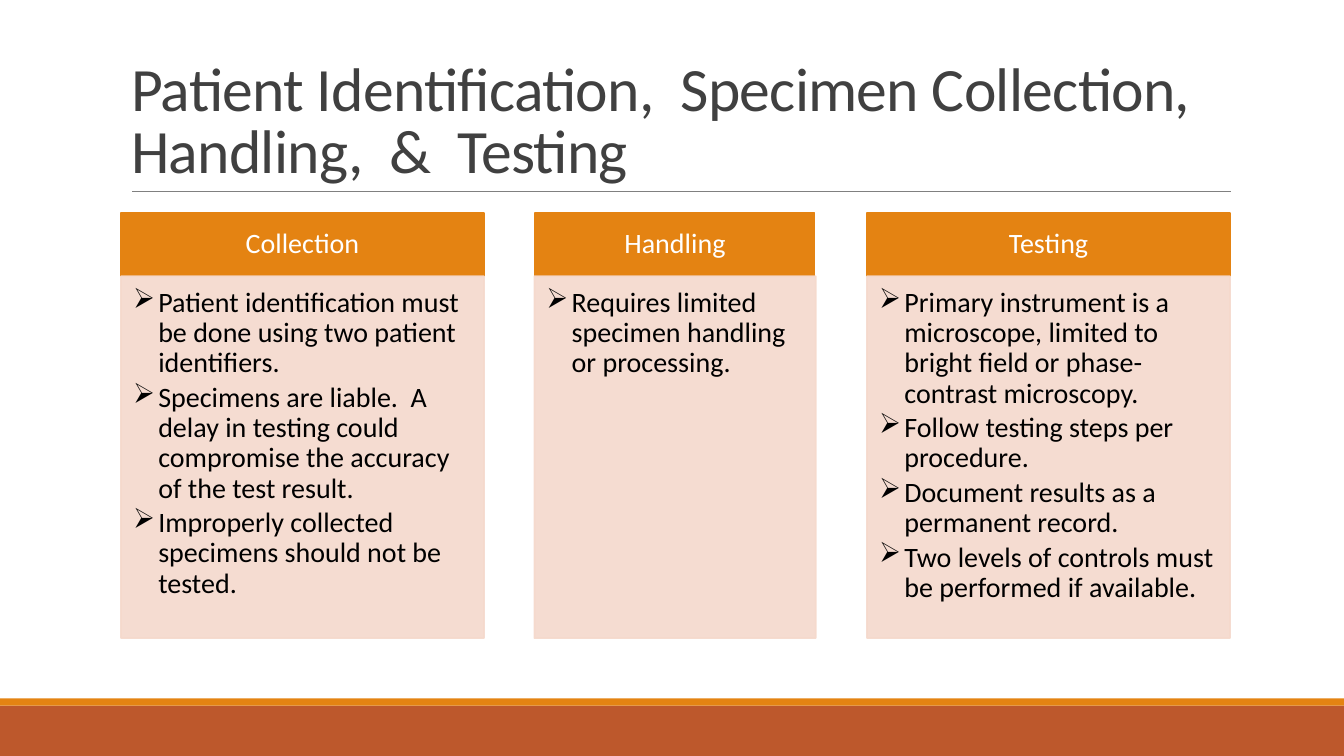
from dataclasses import dataclass

from lxml import etree
from pptx import Presentation
from pptx.dml.color import RGBColor
from pptx.enum.shapes import MSO_CONNECTOR, MSO_SHAPE
from pptx.enum.text import MSO_ANCHOR as Anchor, MSO_AUTO_SIZE as AutoSize, PP_ALIGN as Align
from pptx.oxml.ns import qn
from pptx.util import Emu, Pt

PX = 9144  # EMU per px, 100 px to the inch


@dataclass(frozen=True)
class Theme:
    font: str = "Calibri"
    title_size: int = 44
    text_size: int = 20
    orange: str = "E48312"
    rust: str = "BD582C"
    blush: str = "F5D9CC"
    rule: str = "808080"
    title: str = "404040"
    white: str = "FFFFFF"
    black: str = "000000"


THEME = Theme()
TITLE = "Patient Identification,  Specimen Collection, Handling,  &  Testing"

# Panel geometry
HEADER_TOP, HEADER_HEIGHT = 211, 63
BODY_TOP, BODY_HEIGHT = 274, 359

# Heading, header (left, width), body (left, width), bullet points
COLUMNS = [
    ("Collection", (120, 360), (120, 360), [
        "Patient identification must be done using two patient identifiers.",
        "Specimens are liable.  A delay in testing could compromise the accuracy of the test result.",
        "Improperly collected specimens should not be tested.",
    ]),
    ("Handling", (531, 277), (530, 279), [
        "Requires limited specimen handling or processing.",
    ]),
    ("Testing", (860, 360), (860, 360), [
        "Primary instrument is a microscope, limited to bright field or phase-contrast microscopy.",
        "Follow testing steps per procedure.",
        "Document results as a permanent record.",
        "Two levels of controls must be performed if available.",
    ]),
]


def px(value):
    return Emu(value * PX)


def set_all(target, values):
    for name, value in values.items():
        setattr(target, name, value)


def format_frame(frame, anchor, margins):
    names = ("margin_left", "margin_top", "margin_right", "margin_bottom")
    set_all(frame, {
        "word_wrap": True,
        "auto_size": AutoSize.NONE,
        "vertical_anchor": anchor,
        **{name: px(margin) for name, margin in zip(names, margins)},
    })


def add_run(paragraph, text, size, color):
    run = paragraph.add_run()
    run.text = text
    set_all(run.font, {"name": THEME.font, "size": Pt(size)})
    run.font.color.rgb = RGBColor.from_string(color)
    return run


def add_rectangle(slide, left, top, width, height, color, outlined=False):
    shape = slide.shapes.add_shape(
        MSO_SHAPE.RECTANGLE, px(left), px(top), px(width), px(height))
    shape.shadow.inherit = False
    shape.fill.solid()
    shape.fill.fore_color.rgb = RGBColor.from_string(color)
    if outlined:
        shape.line.color.rgb = RGBColor.from_string(color)
        shape.line.width = Pt(1.25)
    else:
        shape.line.fill.background()
    return shape


def set_opacity(shape, percent):
    for color in shape.element.spPr.iter(qn("a:srgbClr")):
        etree.SubElement(color, qn("a:alpha"), val=str(percent * 1000))


def add_rule(slide, left, top, right):
    line = slide.shapes.add_connector(
        MSO_CONNECTOR.STRAIGHT, px(left), px(top), px(right), px(top))
    line.line.color.rgb = RGBColor.from_string(THEME.rule)
    line.line.width = Pt(0.5)
    etree.SubElement(line.element.spPr, qn("a:effectLst"))


def write_title(slide):
    title = slide.shapes.title
    set_all(title, {"left": px(120), "top": px(31), "width": px(1100), "height": px(159)})
    format_frame(title.text_frame, Anchor.BOTTOM, (10, 5, 10, 5))
    paragraph = title.text_frame.paragraphs[0]
    set_all(paragraph, {"alignment": Align.LEFT, "line_spacing": 0.85})
    run = add_run(paragraph, TITLE, THEME.title_size, THEME.title)
    run.font._element.set("spc", "-50")


def add_header(slide, left, width, heading):
    header = add_rectangle(
        slide, left, HEADER_TOP, width, HEADER_HEIGHT, THEME.orange, outlined=True)
    format_frame(header.text_frame, Anchor.MIDDLE, (16, 9, 16, 9))
    paragraph = header.text_frame.paragraphs[0]
    set_all(paragraph, {"alignment": Align.CENTER, "line_spacing": 0.9})
    add_run(paragraph, heading, THEME.text_size, THEME.white)


def add_bullet(paragraph):
    properties = paragraph._p.get_or_add_pPr()
    properties.set("marL", str(px(25)))
    properties.set("indent", str(px(-25)))
    etree.SubElement(properties, qn("a:buChar"), char="➢")


def add_bullet_panel(slide, left, width, points):
    panel = add_rectangle(
        slide, left, BODY_TOP, width, BODY_HEIGHT, THEME.blush, outlined=True)
    set_opacity(panel, 90)
    frame = panel.text_frame
    format_frame(frame, Anchor.TOP, (12, 12, 16, 17))
    for index, point in enumerate(points):
        paragraph = frame.add_paragraph() if index else frame.paragraphs[0]
        add_bullet(paragraph)
        set_all(paragraph, {
            "alignment": Align.LEFT, "line_spacing": 0.9, "space_after": Pt(3)})
        add_run(paragraph, point, THEME.text_size, THEME.black)


def main():
    presentation = Presentation()
    set_all(presentation, {"slide_width": px(1333), "slide_height": px(750)})
    slide = presentation.slides.add_slide(presentation.slide_layouts.get_by_name("Title Only"))

    # Footer bands
    add_rectangle(slide, 0, 700, 1333, 50, THEME.rust)
    add_rectangle(slide, 0, 693, 1333, 7, THEME.orange)

    # Title with its rule
    add_rule(slide, 131, 190, 1221)
    write_title(slide)

    # Three columns
    for heading, header_span, body_span, points in COLUMNS:
        add_header(slide, *header_span, heading)
        add_bullet_panel(slide, *body_span, points)

    presentation.save("out.pptx")


if __name__ == "__main__":
    main()
